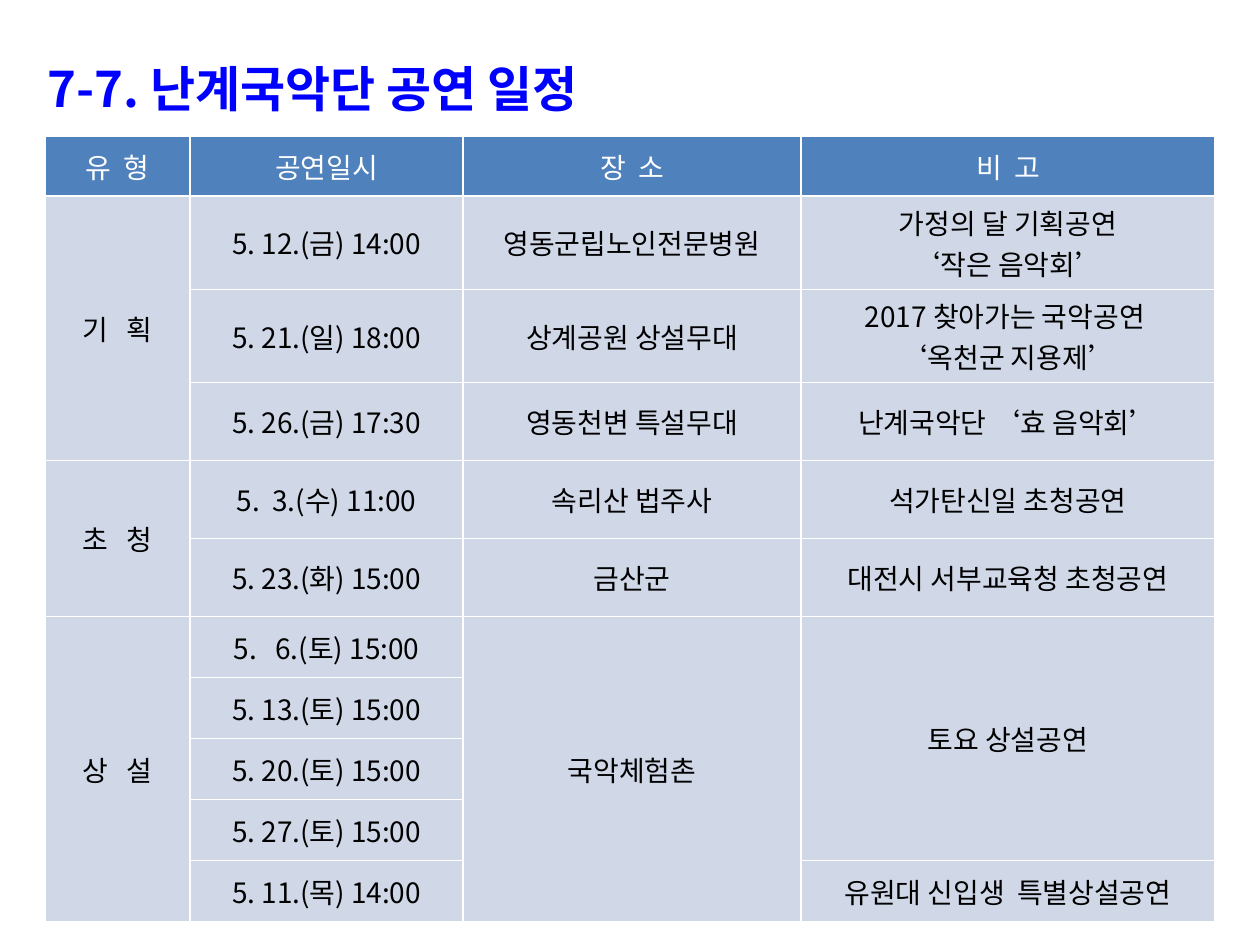
from pptx import Presentation
from pptx.dml.color import RGBColor as Rgb
from pptx.enum.text import MSO_ANCHOR as Anchor, MSO_AUTO_SIZE as Fit, PP_ALIGN as Align
from pptx.oxml.ns import qn
from pptx.util import Pt
from lxml.etree import SubElement

TITLE = "7-7. 난계국악단 공연 일정"
HEAD = ("유  형", "공연일시", "장  소", "비  고")
SHOWS = [
    ("기   획", "5. 12.(금) 14:00", "영동군립노인전문병원", "가정의 달 기획공연\n‘작은 음악회’"),
    (None, "5. 21.(일) 18:00", "상계공원 상설무대", "2017 찾아가는 국악공연 \n‘옥천군 지용제’"),
    (None, "5. 26.(금) 17:30", "영동천변 특설무대", "난계국악단 ‘효 음악회’"),
    ("초   청", "5.  3.(수) 11:00", "속리산 법주사", "석가탄신일 초청공연"),
    (None, "5. 23.(화) 15:00", "금산군", "대전시 서부교육청 초청공연"),
    ("상   설", "5.   6.(토) 15:00", "국악체험촌", "토요 상설공연"),
    (None, "5. 13.(토) 15:00", None, None),
    (None, "5. 20.(토) 15:00", None, None),
    (None, "5. 27.(토) 15:00", None, None),
    (None, "5. 11.(목) 14:00", None, "유원대 신입생  특별상설공연"),
]
COLS = (145, 273, 338, 414)
ROWS = (60,) + (78,) * 5 + (61,) * 5
THEME = {
    "face": "Noto Sans CJK KR",
    "title": {"size": Pt(28), "bold": True, "color": "0000FF"},
    "head": {"size": Pt(16), "bold": False, "color": "FFFFFF", "fill": "4F81BD"},
    "body": {"size": Pt(16), "bold": False, "color": "000000", "fill": "D0D8E8"},
}


def px(n):
    return n * 914400 // 126


def put(frame, text, look, align):
    frame.text = text
    for para in frame.paragraphs:
        para.alignment = align
        for run in para.runs:
            font = run.font
            for key, val in {"name": THEME["face"], "size": look["size"], "bold": look["bold"]}.items():
                setattr(font, key, val)
            font.color.rgb = Rgb.from_string(look["color"])
            SubElement(run._r.get_or_add_rPr(), qn("a:ea")).set("typeface", THEME["face"])


def add_title(slide):
    title = slide.shapes.title
    box = {"left": 35, "top": 37, "width": 1211, "height": 354}
    for key, val in box.items():
        setattr(title, key, px(val))
    frame = title.text_frame
    look = {"word_wrap": True, "auto_size": Fit.NONE,
            "vertical_anchor": Anchor.TOP, "margin_top": px(21)}
    for key, val in look.items():
        setattr(frame, key, val)
    put(frame, TITLE, THEME["title"], Align.LEFT)


def add_plan(slide):
    data = [HEAD] + SHOWS
    table = slide.shapes.add_table(
        len(ROWS), len(COLS), px(45), px(136), px(sum(COLS)), px(sum(ROWS))).table
    table.horz_banding = False
    for col, wide in zip(table.columns, COLS):
        col.width = px(wide)
    for row, tall in zip(table.rows, ROWS):
        row.height = px(tall)
    for r, line in enumerate(data):
        look = THEME["body" if r else "head"]
        for c, text in enumerate(line):
            cell = table.cell(r, c)
            cell.fill.solid()
            cell.fill.fore_color.rgb = Rgb.from_string(look["fill"])
            cell.vertical_anchor = Anchor.MIDDLE
            if text is None:
                continue
            put(cell.text_frame, text, look, Align.CENTER)
            end = r
            while end + 1 < len(data) and data[end + 1][c] is None:
                end += 1
            if end > r:
                cell.merge(table.cell(end, c))


def main():
    deck = Presentation()
    deck.slide_width, deck.slide_height = px(1260), px(945)
    slide = deck.slides.add_slide(deck.slide_layouts[5])
    add_title(slide)
    add_plan(slide)
    deck.save("out.pptx")


if __name__ == "__main__":
    main()
